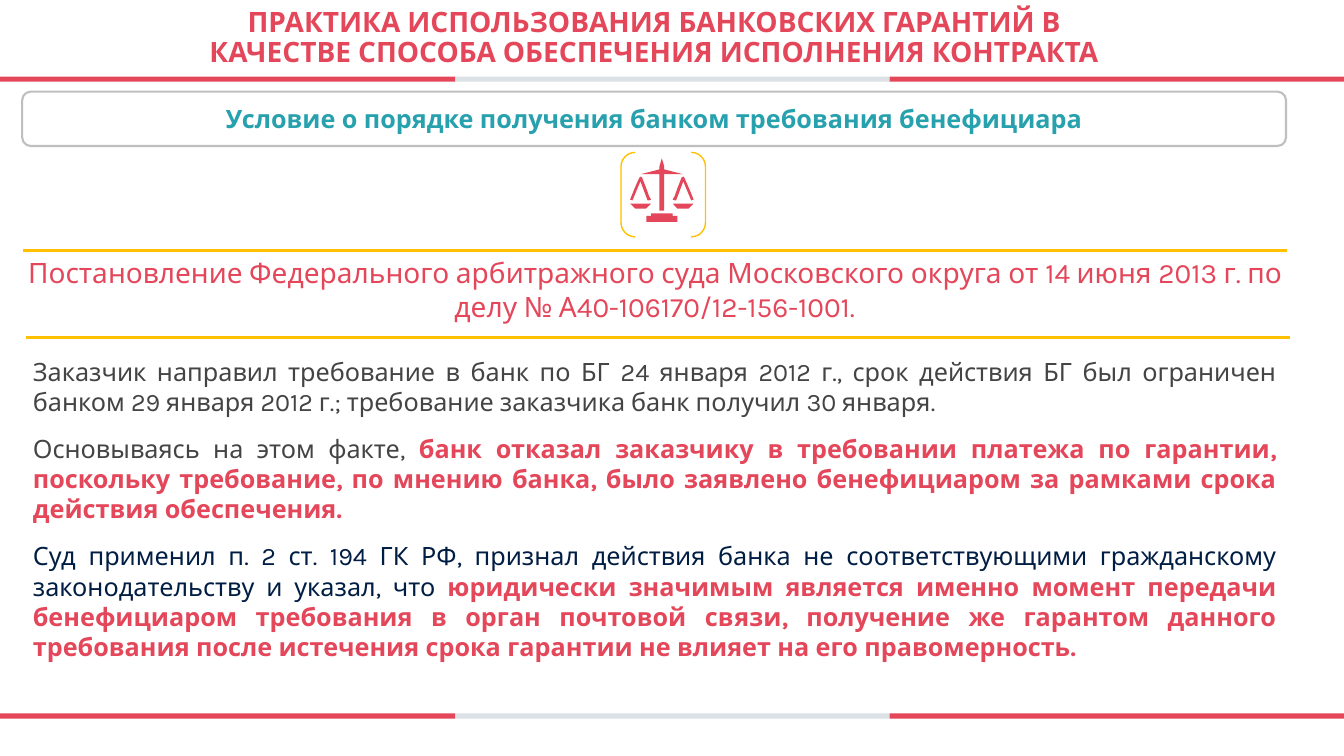
from pptx import Presentation
from pptx.dml.color import RGBColor
from pptx.enum.shapes import MSO_CONNECTOR, MSO_SHAPE
from pptx.enum.text import MSO_ANCHOR, PP_ALIGN
from pptx.oxml.ns import qn
from pptx.util import Cm, Pt
from lxml import etree

RECT, ROUND = MSO_SHAPE.RECTANGLE, MSO_SHAPE.ROUNDED_RECTANGLE
LEFT, RIGHT = MSO_SHAPE.LEFT_BRACKET, MSO_SHAPE.RIGHT_BRACKET
STRAIGHT = MSO_CONNECTOR.STRAIGHT
MIDDLE, TOP = MSO_ANCHOR.MIDDLE, MSO_ANCHOR.TOP
CENTER, JUSTIFY = PP_ALIGN.CENTER, PP_ALIGN.JUSTIFY

RED, TEAL, GOLD, PALE = "E4465A", "27A1AE", "FFC000", "DBE1E4"
WHITE, SILVER, GRAY, NAVY = "FFFFFF", "BFBFBF", "444444", "001D43"


def color(code):
    return RGBColor.from_string(code)


class Page:
    font = "Karla"

    def __init__(self, slide):
        self.slide = slide
        self.shapes = slide.shapes

    def paint(self, shape, fill=None, line=None, width=1):
        shape.shadow.inherit = False
        if fill:
            shape.fill.solid()
            shape.fill.fore_color.rgb = color(fill)
        else:
            shape.fill.background()
        if line:
            shape.line.color.rgb = color(line)
            shape.line.width = Pt(width)
        else:
            shape.line.fill.background()
        return shape

    def block(self, kind, box, adjust=None, **look):
        shape = self.shapes.add_shape(kind, *map(Cm, box))
        if adjust is not None:
            shape.adjustments[0] = adjust
        return self.paint(shape, **look)

    def rule(self, left, right, y):
        line = self.shapes.add_connector(STRAIGHT, Cm(left), Cm(y), Cm(right), Cm(y))
        line.line.color.rgb = color(GOLD)
        line.line.width = Pt(2.25)
        etree.SubElement(line._element.spPr, qn("a:effectLst"))

    def outline(self, axis, points, fill):
        spots = [(Cm(axis + x), Cm(y)) for x, y in points]
        form = self.shapes.build_freeform(*spots[0], scale=1.0)
        form.add_line_segments(spots[1:], close=True)
        self.paint(form.convert_to_shape(), fill=fill)

    def label(self, shape, paras, size, anchor=MIDDLE, inset=(0.25, 0.13), **layout):
        """Each paragraph is a list of (text, colour, bold) runs."""
        frame = shape.text_frame
        side, edge = map(Cm, inset)
        setup = dict(word_wrap=True, vertical_anchor=anchor, margin_left=side,
                     margin_right=side, margin_top=edge, margin_bottom=edge)
        for key, value in setup.items():
            setattr(frame, key, value)
        for i, runs in enumerate(paras):
            para = frame.add_paragraph() if i else frame.paragraphs[0]
            for key, value in layout.items():
                setattr(para, key, value)
            for text, tint, bold in runs:
                run = para.add_run()
                run.text = text
                for key, value in dict(name=self.font, size=Pt(size), bold=bold).items():
                    setattr(run.font, key, value)
                run.font.color.rgb = color(tint)

    def text(self, box, paras, size, **layout):
        self.label(self.shapes.add_textbox(*map(Cm, box)), paras, size, **layout)


def mirror(points):
    return [(-x, y) for x, y in reversed(points)]


def main():
    deck = Presentation()
    deck.slide_width, deck.slide_height = Cm(33.87), Cm(19.05)
    page = Page(deck.slides.add_slide(deck.slide_layouts[6]))

    # Striped bands above and below the content
    stops = [0, 11.48, 22.42, 33.87]
    for y in (1.93, 17.98):
        for left, right, tint in zip(stops, stops[1:], (RED, PALE, RED)):
            page.block(RECT, (left, y, right - left, 0.13), fill=tint)

    # Title
    page.text((5, 0, 22.96, 1.93), [[
        ("ПРАКТИКА ИСПОЛЬЗОВАНИЯ БАНКОВСКИХ ГАРАНТИЙ В КАЧЕСТВЕ СПОСОБА "
         "ОБЕСПЕЧЕНИЯ ИСПОЛНЕНИЯ КОНТРАКТА", RED, True)]],
        20, alignment=CENTER, line_spacing=0.9)

    # Topic box
    topic = page.block(ROUND, (0.56, 2.31, 31.85, 1.37), 0.157,
                       fill=WHITE, line=SILVER, width=1.5)
    page.label(topic, [[
        ("Условие о порядке получения банком требования бенефициара", TEAL, True)]],
        18, alignment=CENTER)

    # Badge with brackets
    page.block(ROUND, (15.65, 3.86, 2.11, 2.08), fill=WHITE)
    for kind, x in ((LEFT, 15.65), (RIGHT, 17.42)):
        page.block(kind, (x, 3.84, 0.36, 2.13), 1, line=GOLD)

    # Scales: foot and post are symmetric, pan and cords appear on both sides
    axis = 16.68
    foot = [(0.27, 5.38), (0.27, 5.44), (0.39, 5.44), (0.39, 5.59)]
    post = [(0, 3.99), (0.06, 4.19), (0.06, 4.27), (0.53, 4.39), (0.06, 4.39), (0.06, 5.31)]
    pan = [(0.27, 5.13), (0.8, 5.13), (0.67, 5.26), (0.4, 5.26)]
    cords = [(0.27, 5.03), (0.33, 5.05), (0.36, 5.05), (0.54, 4.57), (0.74, 5.05),
             (0.8, 5.03), (0.7, 4.78), (0.6, 4.55), (0.55, 4.45), (0.5, 4.47),
             (0.39, 4.75), (0.32, 4.95)]
    for half in (foot, post):
        page.outline(axis, half + mirror(half), RED)
    for part in (pan, cords):
        for points in (part, mirror(part)):
            page.outline(axis, points, RED)

    # Court ruling between two rules
    page.rule(0.58, 32.44, 6.32)
    page.rule(0.66, 32.51, 8.51)
    page.text((0.58, 6.6, 31.85, 1.37), [[
        ("Постановление Федерального арбитражного суда Московского округа "
         "от 14 июня 2013 г. по делу № А40-106170/12-156-1001.", RED, False)]],
        20, inset=(0, 0), alignment=CENTER)

    # Case summary
    page.text((0.58, 8.84, 31.85, 8.03), [
        [("Заказчик направил требование в банк по БГ 24 января 2012 г., срок действия БГ "
          "был ограничен банком 29 января 2012 г.; требование заказчика банк получил "
          "30 января.", GRAY, False)],
        [("Основываясь на этом факте, ", GRAY, False),
         ("банк отказал заказчику в требовании платежа по гарантии, поскольку требование, "
          "по мнению банка, было заявлено бенефициаром за рамками срока действия "
          "обеспечения.", RED, True)],
        [("Суд применил п. 2 ст. 194 ГК РФ, признал действия банка не соответствующими "
          "гражданскому законодательству и указал, что ", NAVY, False),
         ("юридически значимым является именно момент передачи бенефициаром требования "
          "в орган почтовой связи, получение же гарантом данного требования после "
          "истечения срока гарантии не влияет на его правомерность.", RED, True)]],
        18, anchor=TOP, alignment=JUSTIFY, space_after=Pt(12))

    deck.save("out.pptx")


if __name__ == "__main__":
    main()
